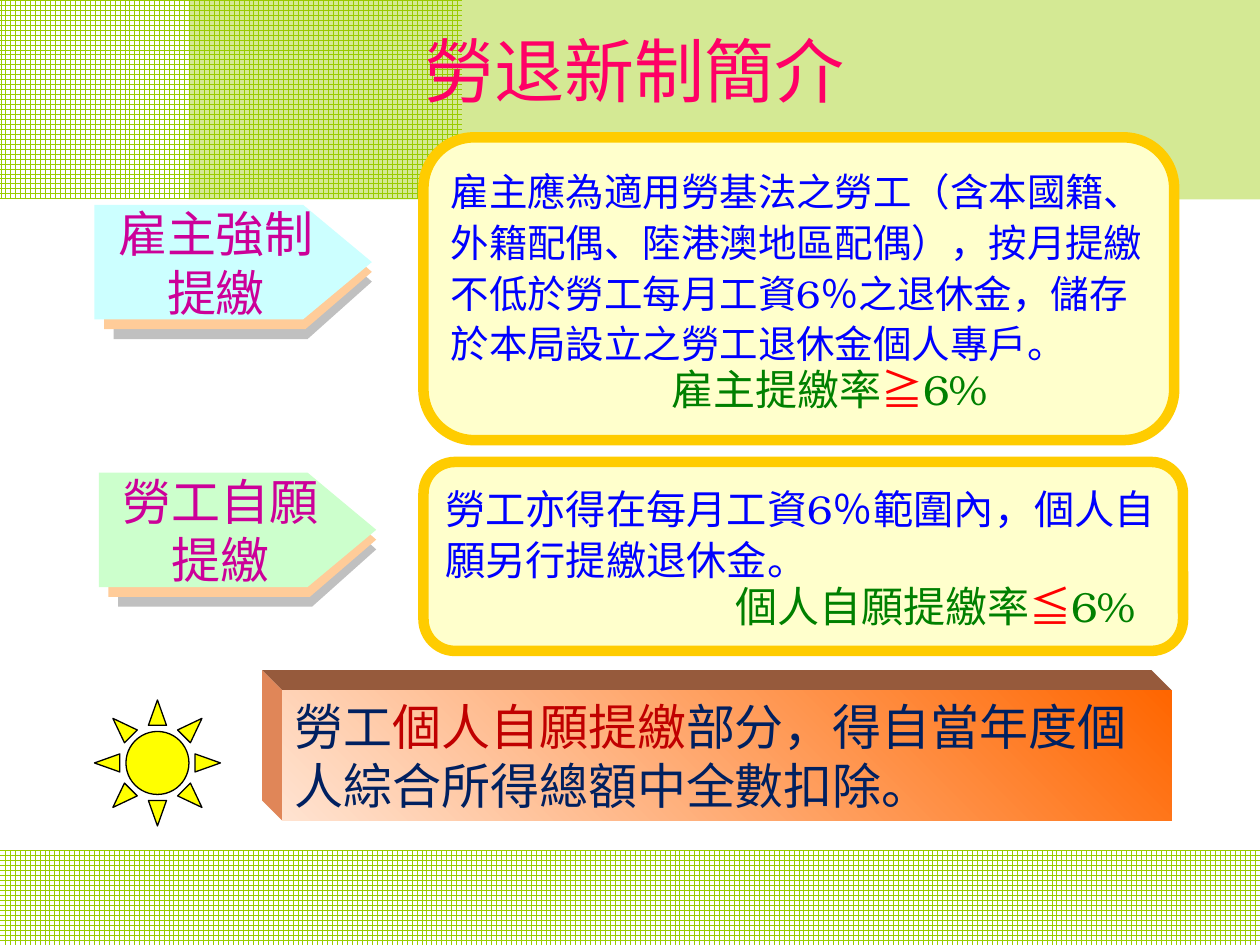
from lxml import etree
from pptx import Presentation
from pptx.dml.color import RGBColor
from pptx.enum.dml import MSO_PATTERN
from pptx.enum.shapes import MSO_SHAPE
from pptx.enum.text import MSO_ANCHOR, PP_ALIGN
from pptx.oxml.ns import qn
from pptx.util import Pt

GRID = MSO_PATTERN.LARGE_GRID
RECT = MSO_SHAPE.FLOWCHART_PROCESS
BOX = MSO_SHAPE.RECTANGLE
ROUND = MSO_SHAPE.ROUNDED_RECTANGLE
ARROW = MSO_SHAPE.PENTAGON
SUN = MSO_SHAPE.SUN
TOP, MIDDLE = MSO_ANCHOR.TOP, MSO_ANCHOR.MIDDLE
LEFT, CENTER = PP_ALIGN.LEFT, PP_ALIGN.CENTER

SANS, SERIF = "Arial", "TeX Gyre Bonum"
LIME, BLUE, GREEN, RED = "99CC00", "0000FF", "008000", "FF0000"
NAVY, PLUM = "002060", "CC0099"


def color(text):
    return RGBColor.from_string(text)


def assign(target, values):
    for name, value in values.items():
        setattr(target, name, value)


class Deck:
    def __init__(self, width, height):
        self.file = Presentation()
        assign(self.file, {"slide_width": Pt(width), "slide_height": Pt(height)})
        self.slide = self.file.slides.add_slide(self.file.slide_layouts[5])
        self.shapes = self.slide.shapes

    def paint(self, shape, fill=None, line=None, weight=1):
        shape.shadow.inherit = False
        if fill:
            shape.fill.solid()
            shape.fill.fore_color.rgb = color(fill)
        if line:
            shape.line.color.rgb = color(line)
            shape.line.width = Pt(weight)
        else:
            shape.line.fill.background()
        return shape

    def shape(self, kind, at, fill=None, line=None, weight=1, adj=None, home=None):
        new = (home or self).shapes.add_shape(kind, *map(Pt, at))
        if adj is not None:
            new.adjustments[0] = adj
        return self.paint(new, fill, line, weight)

    def grid(self, at):
        band = self.shape(RECT, at)
        band.fill.patterned()
        band.fill.pattern = GRID
        band.fill.fore_color.rgb = color(LIME)
        band.fill.back_color.rgb = color("FFFFFF")

    def veil(self, at, fill, alpha):
        band = self.shape(RECT, at, fill)
        tint = band.fill._xPr.find(".//" + qn("a:srgbClr"))
        etree.SubElement(tint, qn("a:alpha")).set("val", str(alpha * 1000))

    def text(self, shape, paras, font, anchor=MIDDLE, wrap=True):
        """Each paragraph is (format, indent, [(text, size, colour), ...])."""
        frame = shape.text_frame
        assign(frame, {"word_wrap": wrap, "vertical_anchor": anchor})
        for i, (form, indent, runs) in enumerate(paras):
            para = frame.add_paragraph() if i else frame.paragraphs[0]
            assign(para, {"alignment": LEFT, **form})
            if indent:
                para._p.get_or_add_pPr().set("marL", str(Pt(indent)))
            for words, size, tint in runs:
                run = para.add_run()
                run.text = words
                assign(run.font, {"name": font, "size": Pt(size)})
                run.font.color.rgb = color(tint)

    def title(self, words, at):
        head = self.shapes.title
        assign(head, dict(zip(("left", "top", "width", "height"), map(Pt, at))))
        margins = ("margin_left", "margin_top", "margin_right", "margin_bottom")
        assign(head.text_frame, dict.fromkeys(margins, 0))
        self.text(head, [({"alignment": CENTER}, 0, [(words, 40, "FF0066")])], SANS)
        # Soft yellow text shadow
        props = head.text_frame.paragraphs[0].runs[0].font._rPr
        effects = etree.Element(qn("a:effectLst"))
        shade = etree.SubElement(effects, qn("a:outerShdw"), dist="35921", dir="2700000")
        etree.SubElement(shade, qn("a:srgbClr"), val="F0F08C")
        props.find(qn("a:solidFill")).addnext(effects)
        # Bring the title in front of the bands
        self.shapes._spTree.append(head._element)

    def card(self, at, body, size, label, sign, indent):
        box = self.shape(ROUND, at, "FFFFCC", "FFCC00", 6, 0.167)
        rate = [(label, 24, GREEN), (sign, 24, RED), ("6%", 24, GREEN)]
        self.text(box, [
            ({"line_spacing": Pt(29)}, 0, [(body, size, BLUE)]),
            ({"line_spacing": Pt(17), "space_before": Pt(10)}, indent, rate),
        ], SERIF)

    def tag(self, x, y, fill, lines):
        group = self.shapes.add_group_shape()
        for step, tint in ((2, "C0C0C0"), (1, "FFCC99"), (0, fill)):
            at = (x + 5.5 * step, y + 5.6 * step, 158.5 - 5.5 * step, 65.5)
            plate = self.shape(ARROW, at, tint, adj=0.6 - 0.02 * step, home=group)
        form = {"alignment": CENTER}
        self.text(plate, [(form, 0, [(row, 28, PLUM)]) for row in lines], SANS, wrap=False)

    def face(self, points, fill):
        start, *rest = [(Pt(x), Pt(y)) for x, y in points]
        form = self.shapes.build_freeform(*start, scale=1.0)
        form.add_line_segments(rest, close=True)
        self.paint(form.convert_to_shape(), fill)

    def block(self, x, y, w, h, depth, runs):
        back, rise = x - depth, y - depth
        self.face([(back, rise), (x + w - depth, rise), (x + w, y), (x, y)], "965A3C")
        self.face([(back, rise), (x, y), (x, y + h), (back, y + h - depth)], "E08658")
        front = self.shape(BOX, (x, y, w, h))
        front.fill.gradient()
        front.fill.gradient_angle = 45
        for stop, place, tint in zip(front.fill.gradient_stops, (0, 1), ("FFE3D1", "FF6600")):
            stop.position = place
            stop.color.rgb = color(tint)
        self.text(front, [({}, 0, runs)], SANS, TOP)


def main():
    deck = Deck(720, 540)

    # Background bands
    deck.grid((0, 486, 720, 54))
    deck.grid((0, 0, 264, 114))
    deck.veil((108, 0, 612, 114), LIME, 42)

    deck.title("勞退新制簡介", (210, 12, 305, 56))

    # Rules for employer and worker
    deck.card((242, 78.5, 429, 173),
              "雇主應為適用勞基法之勞工（含本國籍、外籍配偶、陸港澳地區配偶），"
              "按月提繳不低於勞工每月工資6％之退休金，儲存於本局設立之勞工退休金個人專戶。",
              22, "雇主提繳率", "≧", 126)
    deck.card((242, 264, 434, 108),
              "勞工亦得在每月工資6％範圍內，個人自願另行提繳退休金。",
              23, "個人自願提繳率", "≦", 166)

    # Tax note
    deck.shape(SUN, (54, 400, 72, 72), "FFFF00", "000000", 0.75, 0.25)
    deck.block(161.3, 394.5, 508.3, 74.5, 11.5, [
        ("勞工", 28, NAVY),
        ("個人自願提繳", 28, "C00000"),
        ("部分，得自當年度個人綜合所得總額中全數扣除。", 28, NAVY),
    ])

    # Layered tags
    deck.tag(54, 117, "CCFFFF", ("雇主強制", "提繳"))
    deck.tag(56.5, 270, "CCFFCC", ("勞工自願", "提繳"))

    deck.file.save("out.pptx")


if __name__ == "__main__":
    main()
